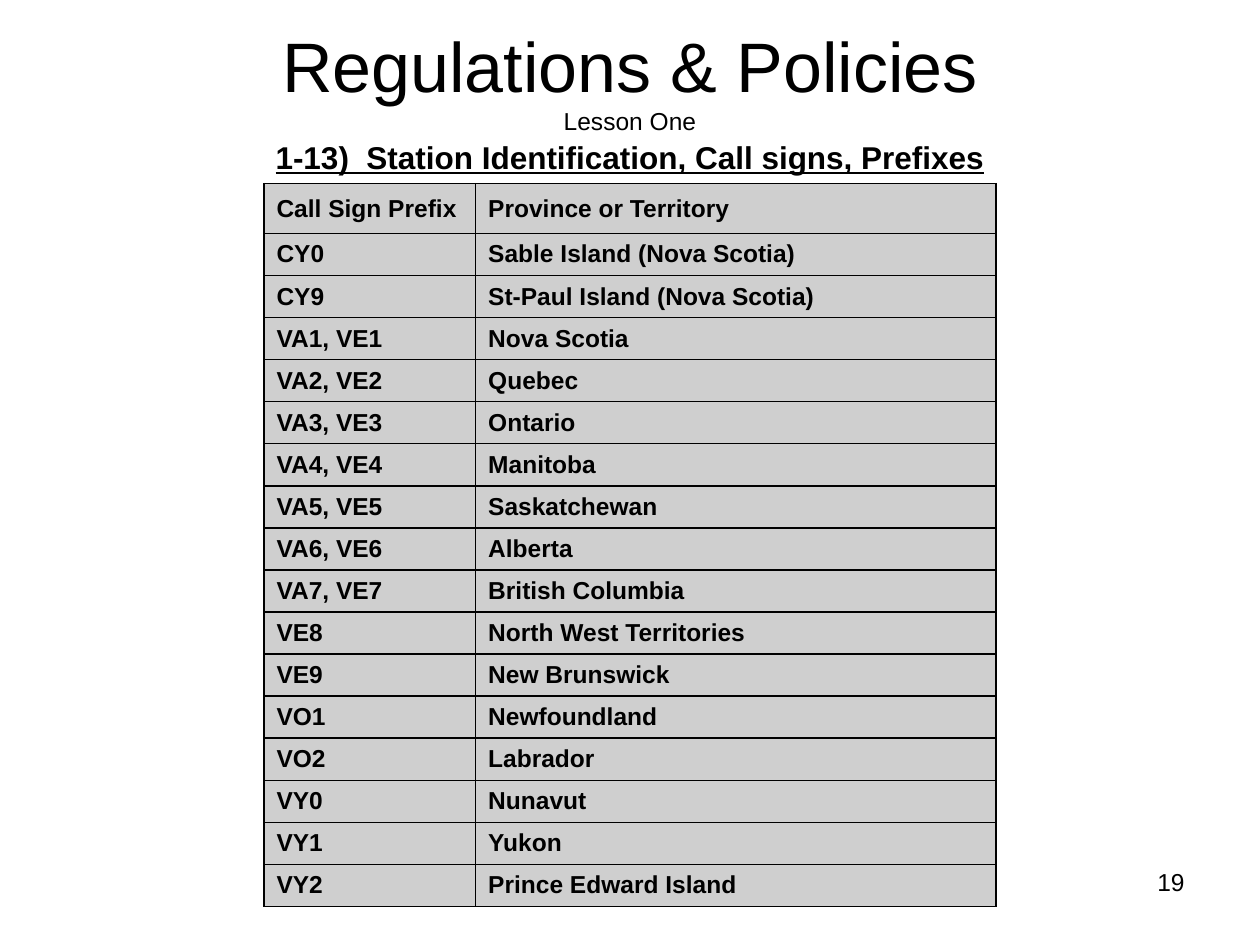
import pptx
import pptx.dml.color
import pptx.enum.text
import pptx.oxml
import pptx.oxml.ns
import pptx.util

Pt = pptx.util.Pt
ALIGN = pptx.enum.text.PP_ALIGN
ANCHOR = pptx.enum.text.MSO_ANCHOR
BLACK = pptx.dml.color.RGBColor(0x00, 0x00, 0x00)
GREY = pptx.dml.color.RGBColor(0xCF, 0xCF, 0xCF)
FONT = "Arial"

PREFIXES = [
    ("Call Sign Prefix", "Province or Territory"),
    ("CY0", "Sable Island (Nova Scotia)"),
    ("CY9", "St-Paul Island (Nova Scotia)"),
    ("VA1, VE1", "Nova Scotia"),
    ("VA2, VE2", "Quebec"),
    ("VA3, VE3", "Ontario"),
    ("VA4, VE4", "Manitoba"),
    ("VA5, VE5", "Saskatchewan"),
    ("VA6, VE6", "Alberta"),
    ("VA7, VE7", "British Columbia"),
    ("VE8", "North West Territories"),
    ("VE9", "New Brunswick"),
    ("VO1", "Newfoundland"),
    ("VO2", "Labrador"),
    ("VY0", "Nunavut"),
    ("VY1", "Yukon"),
    ("VY2", "Prince Edward Island"),
]


def format_run(r, size, bold=False, underline=False):
    r.font.name = FONT
    r.font.size = Pt(size)
    r.font.bold = bold
    r.font.underline = underline
    r.font.color.rgb = BLACK


def add_text(s, box, text, sizes, align, anchor=ANCHOR.TOP, **style):
    sp = s.shapes.add_textbox(*map(Pt, box))
    tf = sp.text_frame
    tf.word_wrap = True
    tf.vertical_anchor = anchor
    p = tf.paragraphs[0]
    p.text = text
    p.alignment = align
    for r, size in zip(p.runs, sizes):
        format_run(r, size, **style)
    return tf


def add_borders(cell):
    tc_pr = cell._tc.get_or_add_tcPr()
    for i, side in enumerate(("lnL", "lnR", "lnT", "lnB")):
        ln = pptx.oxml.parse_xml(
            f'<a:{side} {pptx.oxml.ns.nsdecls("a")} w="{Pt(1)}">'
            f'<a:solidFill><a:srgbClr val="{BLACK}"/></a:solidFill></a:{side}>'
        )
        tc_pr.insert(i, ln)


def add_prefix_table(s, left, top, widths, header_height, row_height):
    height = header_height + row_height * (len(PREFIXES) - 1)
    table = s.shapes.add_table(
        len(PREFIXES), len(widths), Pt(left), Pt(top), Pt(sum(widths)), Pt(height)
    ).table
    for column, width in zip(table.columns, widths):
        column.width = Pt(width)
    for i, (row, texts) in enumerate(zip(table.rows, PREFIXES)):
        row.height = Pt(row_height if i else header_height)
        for cell, text in zip(row.cells, texts):
            cell.text = text
            cell.vertical_anchor = ANCHOR.MIDDLE
            cell.fill.solid()
            cell.fill.fore_color.rgb = GREY
            format_run(cell.text_frame.paragraphs[0].runs[0], 14, bold=True)
            add_borders(cell)


def main():
    prs = pptx.Presentation()
    prs.slide_width, prs.slide_height = Pt(720), Pt(540)
    s = prs.slides.add_slide(prs.slide_layouts[6])
    add_text(s, (516, 492, 168, 37.5), "19", [14], ALIGN.RIGHT)
    tf = add_text(s, (36, 79, 648, 38),
                  "1-13)  Station Identification, Call signs, Prefixes",
                  [18], ALIGN.CENTER, bold=True, underline=True)
    tf.margin_top = 0
    add_prefix_table(s, 150.8, 105, (121, 297.4), 28.4, 24)
    add_text(s, (36, 0, 648, 90), "Regulations & Policies\vLesson One",
             [40, 14], ALIGN.CENTER, ANCHOR.MIDDLE)
    prs.save("out.pptx")


if __name__ == "__main__":
    main()
